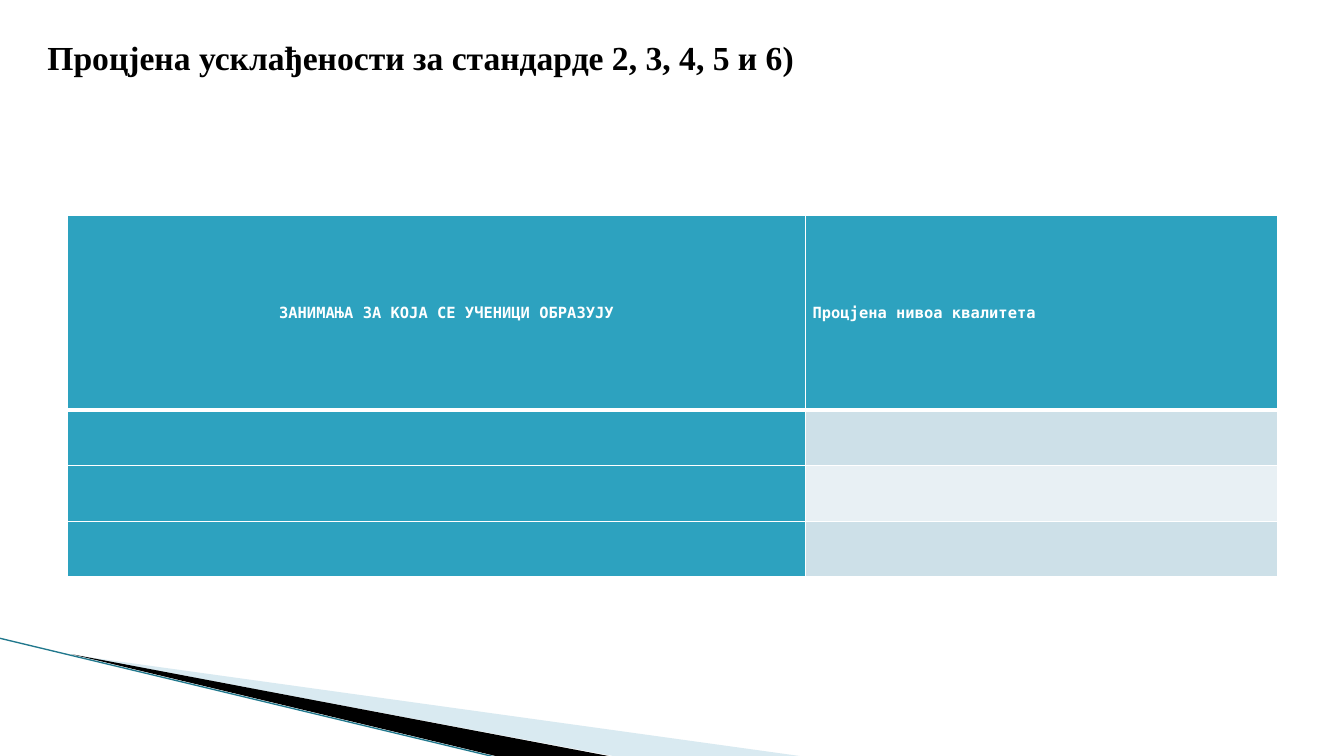
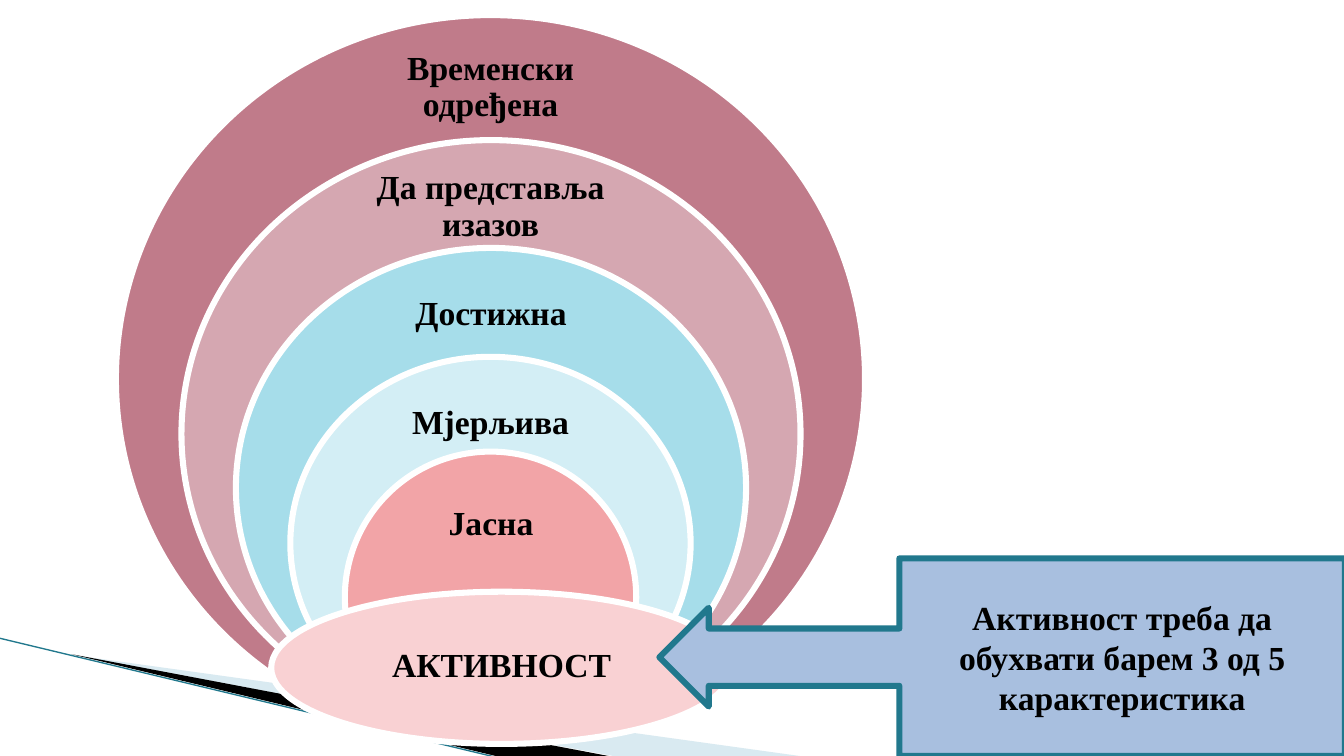
"""Build two slides on rating standards and on the traits of a good activity."""
from lxml.etree import SubElement
from pptx import Presentation
from pptx.dml.color import RGBColor
from pptx.enum.shapes import MSO_CONNECTOR, MSO_SHAPE as Form
from pptx.enum.text import MSO_ANCHOR as Anchor, MSO_AUTO_SIZE as Fit, PP_ALIGN as Align
from pptx.oxml.ns import qn
from pptx.util import Pt

PX = 9144
SERIF = "Times New Roman"
MONO = "DejaVu Sans Mono"
BLACK, WHITE = "000000", "FFFFFF"
TEAL, DARK = "2DA2BF", "21788D"
BANDS = ["CDE0E8", "E8F0F4"]


def paint(fill, hue):
    fill.solid()
    fill.fore_color.rgb = RGBColor.from_string(hue)


def say(frame, text, face=SERIF, size=24, hue=BLACK, align=Align.CENTER, lead=1.0, inset=None):
    frame.word_wrap = True
    frame.auto_size = Fit.NONE
    frame.vertical_anchor = Anchor.MIDDLE
    if inset is not None:
        frame.margin_left = frame.margin_right = inset * PX
        frame.margin_top = frame.margin_bottom = inset * PX
    para = frame.paragraphs[0]
    para.text = text
    para.alignment = align
    para.line_spacing = lead
    font = para.runs[0].font
    font.name, font.size, font.bold = face, Pt(size), True
    paint(font.fill, hue)


deck = Presentation()
deck.slide_width, deck.slide_height = 1333 * PX, 750 * PX
first = deck.slides.add_slide(deck.slide_layouts[5])
second = deck.slides.add_slide(deck.slide_layouts[6])

# The corner wedge is drawn once and moved to the master.
wedges = [
    ("A0CBDC", 40, [(73, 650), (793, 750), (608, 750)]),
    (BLACK, 100, [(71, 649), (609, 751), (496, 751)]),
]
decor = []
for hue, alpha, spots in wedges:
    pen = first.shapes.build_freeform(*spots[0], scale=PX)
    pen.add_line_segments(spots[1:], close=True)
    wedge = pen.convert_to_shape()
    wedge.shadow.inherit = False
    wedge.line.fill.background()
    paint(wedge.fill, hue)
    tint = wedge.fill._xPr.find(qn("a:solidFill"))[0]
    SubElement(tint, qn("a:alpha"), val=str(alpha * 1000))
    decor.append(wedge)
edge = first.shapes.add_connector(MSO_CONNECTOR.STRAIGHT, -1 * PX, 633 * PX, 495 * PX, 752 * PX)
paint(edge.line.fill, DARK)
edge.line.width = Pt(0.95)
SubElement(edge._element.spPr, qn("a:effectLst"))
decor.append(edge)
for part in decor:
    deck.slide_master.shapes._spTree.append(part._element)

title = first.shapes.title
title.left, title.top, title.width, title.height = 37 * PX, 32 * PX, 800 * PX, 50 * PX
say(title.text_frame, "Процјена усклађености за стандарде 2, 3, 4, 5 и 6)", align=Align.LEFT)

grid = first.shapes.add_table(4, 2, 67 * PX, 214 * PX, 1200 * PX, 358 * PX).table
for col, width in zip(grid.columns, [732, 468]):
    col.width = width * PX
for row, height in zip(grid.rows, [193, 55, 55, 55]):
    row.height = height * PX
for r, row in enumerate(grid.rows):
    for c, cell in enumerate(row.cells):
        props = cell._tc.get_or_add_tcPr()
        rules = {"L": 1, "R": 1, "T": 3 if r == 1 else 1, "B": 3 if r == 0 else 1}
        for side, width in rules.items():
            rule = SubElement(props, qn("a:ln" + side), w=str(Pt(width)))
            SubElement(SubElement(rule, qn("a:solidFill")), qn("a:srgbClr"), val=WHITE)
        paint(cell.fill, TEAL if r == 0 or c == 0 else BANDS[(r - 1) % 2])

heads = [
    ("ЗАНИМАЊА ЗА КОЈА СЕ УЧЕНИЦИ ОБРАЗУЈУ", Align.CENTER, 20),
    ("Процјена нивоа квалитета", Align.LEFT, 0),
]
for cell, (text, align, indent) in zip(grid.rows[0].cells, heads):
    say(cell.text_frame, text, face=MONO, size=11, hue=WHITE, align=align, lead=1.07)
    cell.vertical_anchor = Anchor.MIDDLE
    cell.margin_left = cell.margin_right = 7 * PX
    cell.margin_top = cell.margin_bottom = 0
    cell.text_frame.paragraphs[0]._p.get_or_add_pPr().set("indent", str(indent * PX))

rings = [
    ("Временски одређена", "C07B8A", (115, 15, 743, 722), (347, 51, 279, 72)),
    ("Да представља изазов", "D5A7B1", (180, 139, 614, 583), (354, 172, 265, 67)),
    ("Достижна", "A6DDEA", (234, 246, 506, 476), (356, 279, 262, 66)),
    ("Мјерљива", "D3EEF5", (288, 354, 397, 370), (379, 387, 215, 67)),
    ("Јасна", "F2A4A7", (342, 448, 289, 289), (393, 484, 188, 72)),
    ("АКТИВНОСТ", "F9D1D3", (269, 587, 457, 151), (336, 624, 323, 75)),
]
for text, hue, oval, box in rings:
    ring = second.shapes.add_shape(Form.OVAL, *[n * PX for n in oval])
    ring.shadow.inherit = False
    paint(ring.fill, hue)
    paint(ring.line.fill, WHITE)
    ring.line.width = Pt(4.33)
    label = second.shapes.add_textbox(*[n * PX for n in box])
    say(label.text_frame, text, lead=0.9, inset=19)

note = second.shapes.add_shape(Form.LEFT_ARROW_CALLOUT, 654 * PX, 554 * PX, 680 * PX, 196 * PX)
note.shadow.inherit = False
for i, ratio in enumerate([0.29, 0.25, 0.25, 0.65]):
    note.adjustments[i] = ratio
paint(note.fill, "A8BFDF")
paint(note.line.fill, DARK)
note.line.width = Pt(4.33)
say(note.text_frame, "Активност треба да обухвати барем 3 од 5 карактеристика")

deck.save("out.pptx")
